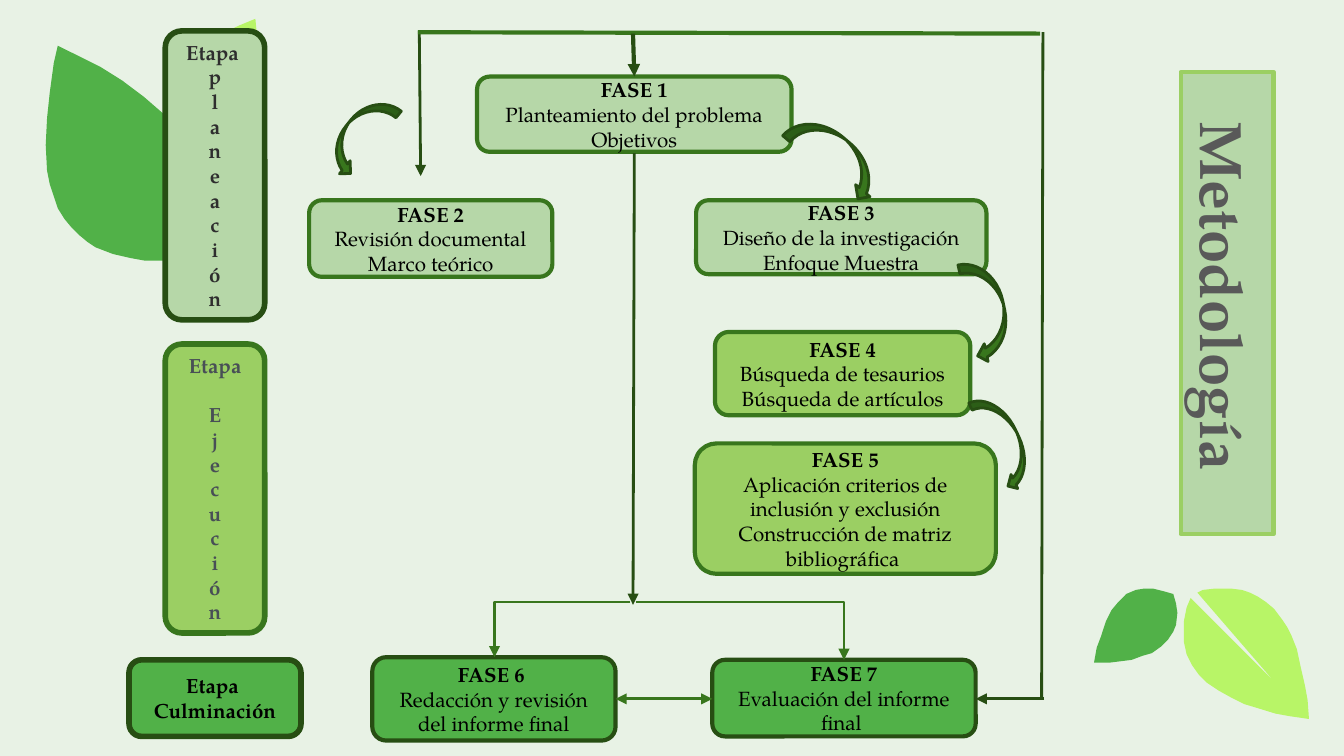
from copy import deepcopy

from lxml import etree
from pptx import Presentation
from pptx.dml import color
from pptx.enum import shapes, text
from pptx.oxml import ns
from pptx.util import Inches, Pt

COLORS = {
    "background": "E8F2E5", "pale": "B6D7A8", "light": "9BCF63",
    "strong": "51B148", "lime": "B8F567", "dark": "274E13",
    "border": "38761D", "black": "000000", "title": "595959",
    "planning": "2E2E2E", "execution": "484F56",
}


def rgb(name):
    return color.RGBColor.from_string(COLORS[name])


def write(shape, content, size=11, ink="black", bold_all=False, inset=0.05,
          anchor=text.MSO_ANCHOR.MIDDLE):
    frame = shape.text_frame
    frame.word_wrap = True
    frame.vertical_anchor = anchor
    frame.margin_left = frame.margin_right = Inches(0.1)
    frame.margin_top = frame.margin_bottom = Inches(inset)
    for index, line in enumerate(content.split("\n")):
        paragraph = frame.paragraphs[0] if index == 0 else frame.add_paragraph()
        paragraph.text = line
        paragraph.alignment = text.PP_ALIGN.CENTER
        for position, run in enumerate(paragraph.runs):
            run.font.name = "TeX Gyre Pagella"
            run.font.size = Pt(size)
            run.font.bold = bold_all or (index == 0 and position == 0)
            run.font.color.rgb = rgb(ink)
        for line_break in paragraph._p.findall(ns.qn("a:br")):
            line_break.append(deepcopy(paragraph.runs[0]._r.rPr))


presentation = Presentation()
presentation.slide_width = Inches(10)
presentation.slide_height = Inches(5.625)
slide = presentation.slides.add_slide(presentation.slide_layouts[6])
slide.background.fill.solid()
slide.background.fill.fore_color.rgb = rgb("background")

leaves = [
    ("lime", [
        (9.54, 4.61), (9.48, 4.53), (9.42, 4.48), (9.36, 4.44), (9.3, 4.41),
        (9.24, 4.39), (9.16, 4.38), (9.04, 4.38), (8.95, 4.39), (8.91, 4.41),
        (9.48, 5.07), (8.86, 4.45), (8.83, 4.52), (8.81, 4.62), (8.81, 4.78),
        (8.83, 4.87), (8.87, 4.95), (8.92, 5.02), (8.98, 5.08), (9.07, 5.14),
        (9.16, 5.19), (9.26, 5.24), (9.36, 5.27), (9.49, 5.31), (9.6, 5.33),
        (9.74, 5.35), (9.73, 5.21), (9.71, 5.1), (9.68, 4.97), (9.65, 4.83),
        (9.61, 4.73), (9.58, 4.67)]),
    ("strong", [
        (8.73, 4.42), (8.66, 4.4), (8.58, 4.38), (8.51, 4.38), (8.45, 4.39),
        (8.38, 4.42), (8.32, 4.48), (8.27, 4.54), (8.23, 4.62), (8.19, 4.74),
        (8.16, 4.82), (8.14, 4.93), (8.26, 4.93), (8.42, 4.91), (8.5, 4.88),
        (8.57, 4.86), (8.64, 4.81), (8.69, 4.76), (8.73, 4.7), (8.75, 4.65),
        (8.76, 4.56), (8.75, 4.49)]),
    ("lime", [
        (1.34, 0.65), (1.36, 0.76), (1.41, 0.87), (1.76, 0.37), (1.45, 0.9),
        (1.55, 0.9), (1.66, 0.88), (1.75, 0.83), (1.81, 0.77), (1.86, 0.68),
        (1.89, 0.58), (1.91, 0.48), (1.92, 0.36), (1.91, 0.24), (1.9, 0.14),
        (1.78, 0.19), (1.61, 0.27), (1.53, 0.33), (1.45, 0.39), (1.4, 0.46),
        (1.36, 0.53)]),
    ("strong", [
        (1.22, 1.94), (1.3, 1.83), (1.36, 1.73), (1.41, 1.61), (1.44, 1.48),
        (1.45, 1.36), (1.44, 1.24), (1.41, 1.12), (1.36, 1.04), (1.29, 0.92),
        (1.22, 0.85), (1.07, 0.72), (0.91, 0.6), (0.75, 0.5), (0.55, 0.4),
        (0.43, 0.34), (0.4, 0.47), (0.37, 0.69), (0.35, 0.88), (0.34, 1.08),
        (0.35, 1.27), (0.37, 1.37), (0.4, 1.46), (0.43, 1.55), (0.48, 1.63),
        (0.53, 1.69), (0.59, 1.75), (0.65, 1.8), (0.71, 1.84), (0.84, 1.89),
        (0.97, 1.92), (1.08, 1.94)]),
]
for fill, points in leaves:
    outline = [(Inches(x), Inches(y)) for x, y in points]
    builder = slide.shapes.build_freeform(*outline[0])
    builder.add_line_segments(outline[1:], close=True)
    leaf = builder.convert_to_shape()
    leaf.shadow.inherit = False
    leaf.fill.solid()
    leaf.fill.fore_color.rgb = rgb(fill)
    leaf.line.fill.background()

ROUNDED = shapes.MSO_SHAPE.ROUNDED_RECTANGLE
planning = "Etapa \v" + "\v".join("planeación")
execution = "Etapa\v \v" + "\v".join("Ejecuci") + "\nó\vn"
stage = {"bold_all": True}
boxes = [
    (shapes.MSO_SHAPE.RECTANGLE, (7.41, 1.91, 3.44, 0.69), "pale", "light", 2.25, "Metodología ",
     {"size": 32, "ink": "title", "bold_all": True, "inset": 0.1, "anchor": text.MSO_ANCHOR.TOP}),
    (ROUNDED, (1.23, 0.23, 0.74, 2.15), "pale", "dark", 3, planning, {"ink": "planning", **stage}),
    (ROUNDED, (1.23, 2.56, 0.74, 2.15), "light", "border", 3, execution, {"ink": "execution", **stage}),
    (ROUNDED, (2.3, 1.49, 1.81, 0.57), "pale", "border", 2.25,
     "FASE 2\vRevisión documental\vMarco teórico", {}),
    (ROUNDED, (5.18, 1.49, 2.16, 0.55), "pale", "border", 2.25,
     "FASE 3\vDiseño de la investigación\vEnfoque Muestra", {}),
    (ROUNDED, (5.32, 2.47, 1.9, 0.62), "light", "border", 2.25,
     "FASE 4\vBúsqueda de tesaurios\vBúsqueda de artículos", {}),
    (ROUNDED, (5.17, 3.3, 2.24, 0.97), "light", "border", 2.25,
     "FASE 5\vAplicación criterios de inclusión y exclusión\nConstrucción de matriz bibliográfica ", {}),
    (ROUNDED, (0.96, 4.91, 1.28, 0.57), "strong", "dark", 3, "Etapa \vCulminación", stage),
    (ROUNDED, (2.77, 4.89, 1.81, 0.62), "strong", "dark", 2.25,
     "FASE 6 \vRedacción y revisión del informe final", {}),
    (ROUNDED, (5.3, 4.91, 1.96, 0.57), "strong", "dark", 2.25,
     "FASE 7\vEvaluación del informe final ", {}),
    (ROUNDED, (3.55, 0.57, 2.34, 0.56), "pale", "border", 2.25,
     "FASE 1\vPlanteamiento del problema\vObjetivos", {}),
]
curved_arrows = [
    ((6.96, 2.18, 0.76, 0.27), 257.8, True),
    ((5.82, 1.02, 0.8, 0.28), 220, True),
    ((7.1, 3.17, 0.74, 0.23), 244.7, True),
    ((2.35, 0.88, 0.66, 0.25), 129.2, False),
]
for kind, place, fill, border, width, content, style in boxes + [
    (shapes.MSO_SHAPE.CURVED_UP_ARROW, place, "border", "dark", 1.5, None, (angle, flipped))
    for place, angle, flipped in curved_arrows
]:
    shape = slide.shapes.add_shape(kind, *map(Inches, place))
    shape.shadow.inherit = False
    shape.fill.solid()
    shape.fill.fore_color.rgb = rgb(fill)
    shape.line.color.rgb = rgb(border)
    shape.line.width = Pt(width)
    if content:
        write(shape, content, **style)
        if kind != ROUNDED:
            shape.rotation = 90
    else:
        shape.rotation, flipped = style
        if flipped:
            shape._element.spPr.xfrm.set("flipH", "1")

STRAIGHT, ELBOW = shapes.MSO_CONNECTOR.STRAIGHT, shapes.MSO_CONNECTOR.ELBOW
connectors = [
    (STRAIGHT, (4.72, 1.14, 4.71, 4.5), "dark", 1.5, ["tailEnd"]),
    (STRAIGHT, (4.58, 5.2, 5.3, 5.2), "border", 1.5, ["headEnd", "tailEnd"]),
    (STRAIGHT, (7.77, 5.2, 7.26, 5.2), "dark", 1.5, ["tailEnd"]),
    (STRAIGHT, (7.75, 5.2, 7.76, 0.24), "dark", 1.5, []),
    (STRAIGHT, (3.12, 0.23, 3.13, 1.31), "dark", 1.5, ["tailEnd"]),
    (STRAIGHT, (7.74, 0.25, 3.11, 0.24), "border", 2.25, []),
    (STRAIGHT, (4.71, 0.25, 4.72, 0.57), "dark", 2.25, ["tailEnd"]),
    (ELBOW, (4.69, 4.48, 3.68, 4.89), "border", 1.5, ["tailEnd"]),
    (ELBOW, (4.73, 4.48, 6.28, 4.91), "border", 1.5, ["tailEnd"]),
]
for kind, ends, ink, width, arrowheads in connectors:
    connector = slide.shapes.add_connector(kind, *map(Inches, ends))
    connector.line.color.rgb = rgb(ink)
    connector.line.width = Pt(width)
    properties = connector._element.spPr
    if kind == ELBOW:
        properties.find(ns.qn("a:prstGeom")).set("prst", "bentConnector2")
    for end in arrowheads:
        etree.SubElement(properties.find(ns.qn("a:ln")), ns.qn("a:" + end), type="triangle")
    etree.SubElement(properties, ns.qn("a:effectLst"))

presentation.save("out.pptx")
